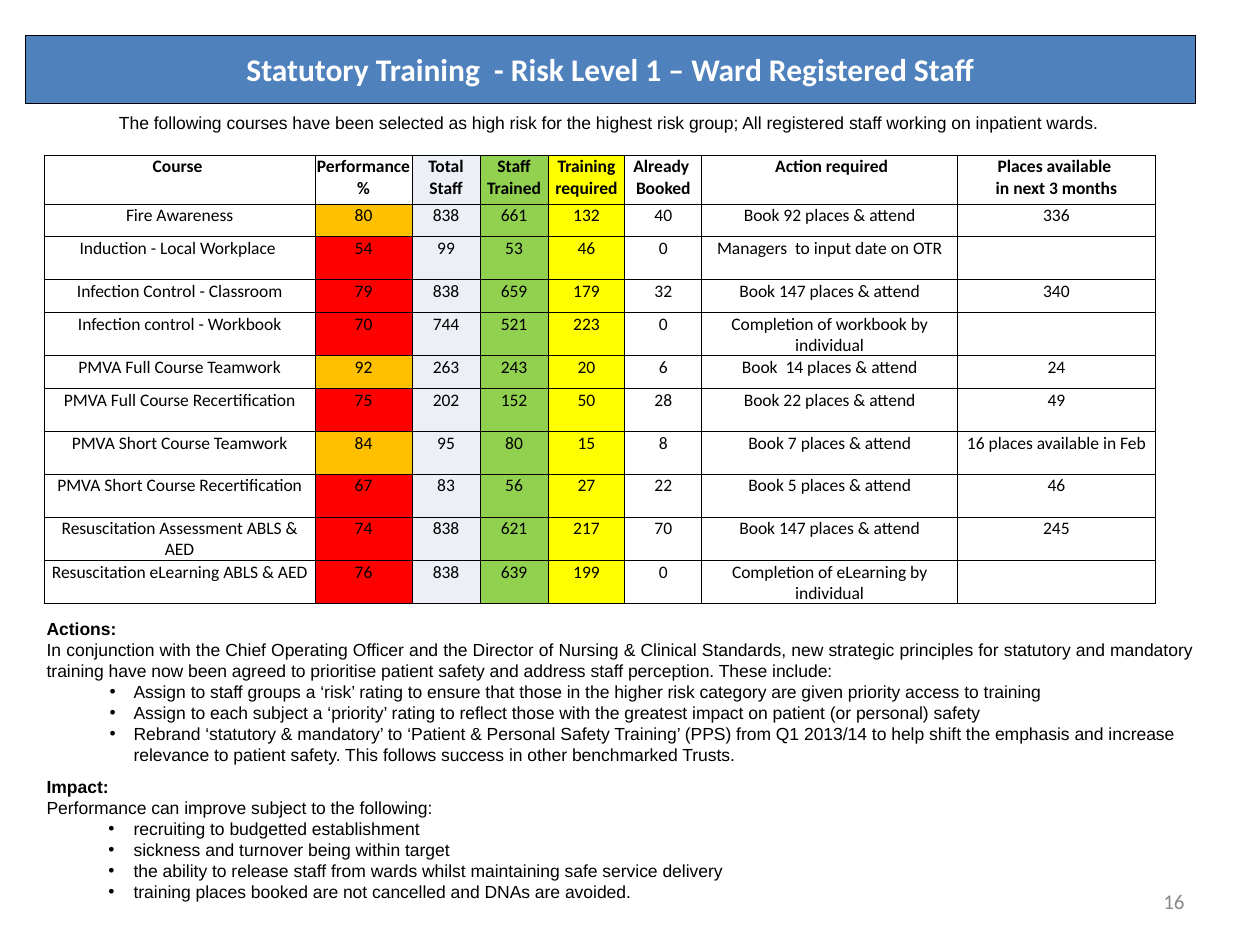
"""Build the statutory training slide for ward registered staff."""
from dataclasses import dataclass

from lxml.etree import SubElement
from pptx import Presentation
from pptx.dml.color import RGBColor
from pptx.enum.text import MSO_ANCHOR, MSO_AUTO_SIZE, PP_ALIGN
from pptx.oxml import parse_xml
from pptx.oxml.ns import nsdecls, qn
from pptx.util import Inches, Pt

BLACK = RGBColor(0x00, 0x00, 0x00)
WHITE = RGBColor(0xFF, 0xFF, 0xFF)
BLUE = RGBColor(0x4F, 0x81, 0xBD)
GREY = RGBColor(0x89, 0x89, 0x89)
PALE = RGBColor(0xEC, 0xEF, 0xF6)
GREEN = RGBColor(0x92, 0xD0, 0x50)
YELLOW = RGBColor(0xFF, 0xFF, 0x00)
AMBER = RGBColor(0xFF, 0xC0, 0x00)
RED = RGBColor(0xFF, 0x00, 0x00)
AMBER_FROM = 80


@dataclass(frozen=True)
class Column:
    heading: str
    width: float
    fill: RGBColor | None = None


@dataclass(frozen=True)
class Course:
    name: str
    performance: int
    staff: int
    trained: int
    required: int
    booked: int
    action: str
    places: str = ""
    height: float = 0.34

    def values(self) -> list[str]:
        return [self.name, str(self.performance), str(self.staff), str(self.trained),
                str(self.required), str(self.booked), self.action, self.places]


@dataclass(frozen=True)
class Line:
    text: str
    heading: bool = False
    align: PP_ALIGN = PP_ALIGN.LEFT
    level: int = 0
    hanging: float = 0


COLUMNS = [
    Column("Course ", 2.15),
    Column("Performance\n%", 0.77),
    Column("Total Staff", 0.54, PALE),
    Column("Staff Trained", 0.54, GREEN),
    Column("Training required", 0.61, YELLOW),
    Column("Already \nBooked", 0.61),
    Column(" Action required", 2.03),
    Column("Places available \nin next 3 months", 1.57),
]
COURSES = [
    Course("Fire Awareness", 80, 838, 661, 132, 40, "Book 92 places & attend", "336", 0.26),
    Course("Induction - Local Workplace ", 54, 99, 53, 46, 0, "Managers  to input date on OTR"),
    Course("Infection Control - Classroom", 79, 838, 659, 179, 32,
           "Book 147 places & attend", "340", 0.26),
    Course("Infection control - Workbook", 70, 744, 521, 223, 0,
           "Completion of workbook by individual"),
    Course("PMVA Full Course Teamwork", 92, 263, 243, 20, 6,
           "Book  14 places & attend", "24", 0.26),
    Course("PMVA Full Course Recertification", 75, 202, 152, 50, 28,
           "Book 22 places & attend", "49"),
    Course("PMVA Short Course Teamwork", 84, 95, 80, 15, 8,
           "Book 7 places & attend", "16 places available in Feb"),
    Course("PMVA Short Course Recertification", 67, 83, 56, 27, 22,
           "Book 5 places & attend", "46"),
    Course("Resuscitation Assessment ABLS & AED", 74, 838, 621, 217, 70,
           "Book 147 places & attend", "245"),
    Course("Resuscitation eLearning ABLS & AED", 76, 838, 639, 199, 0,
           "Completion of eLearning by individual"),
]
LINES = [
    Line("Actions:", heading=True),
    Line("In conjunction with the Chief Operating Officer and the Director of Nursing & Clinical "
         "Standards, new strategic principles for statutory and mandatory training have now been "
         "agreed to prioritise patient safety and address staff perception. These include:",
         align=PP_ALIGN.JUSTIFY),
    Line("Assign to staff groups a ‘risk’ rating to ensure that those in the higher risk category "
         "are given priority access to training", level=1, hanging=0.19),
    Line("Assign to each subject a ‘priority’ rating to reflect those with the greatest impact on "
         "patient (or personal) safety", level=1, hanging=0.19),
    Line("Rebrand ‘statutory & mandatory’ to ‘Patient & Personal Safety Training’ (PPS) from Q1 "
         "2013/14 to help shift the emphasis and increase relevance to patient safety. This "
         "follows success in other benchmarked Trusts.", level=1, hanging=0.19),
    Line("Impact:", heading=True),
    Line("Performance can improve subject to the following:"),
    Line("recruiting to budgetted establishment", hanging=0.2),
    Line("sickness and turnover being within target", hanging=0.2),
    Line("the ability to release staff from wards whilst maintaining safe service delivery",
         hanging=0.2),
    Line("training places booked are not cancelled and DNAs are avoided.", hanging=0.2),
]


def place(sp, left: float, top: float, width: float, height: float) -> None:
    sp.left, sp.top, sp.width, sp.height = map(Inches, (left, top, width, height))


def style(p, size: float, name: str = "Calibri", color: RGBColor = BLACK,
          bold: bool = False, align: PP_ALIGN = PP_ALIGN.CENTER) -> None:
    p.alignment = align
    p.font.size, p.font.name, p.font.bold = Pt(size), name, bold
    p.font.color.rgb = color


def add_text(s, text: str, box: tuple[float, float, float, float], anchor: MSO_ANCHOR, **font):
    tf = s.shapes.add_textbox(*map(Inches, box)).text_frame
    tf.word_wrap, tf.vertical_anchor = True, anchor
    tf.text = text
    style(tf.paragraphs[0], **font)


def add_borders(cell) -> None:
    tc_pr = cell._tc.get_or_add_tcPr()
    for i, side in enumerate(("lnL", "lnR", "lnT", "lnB")):
        tc_pr.insert(i, parse_xml(
            f'<a:{side} {nsdecls("a")} w="{Pt(0.5)}"><a:solidFill>'
            f'<a:srgbClr val="{BLACK}"/></a:solidFill></a:{side}>'))


def fill_cell(cell, text: str, color: RGBColor | None, bold: bool) -> None:
    cell.margin_left = cell.margin_right = cell.margin_top = Inches(0.01)
    cell.margin_bottom = 0
    cell.text = text
    for p in cell.text_frame.paragraphs:
        style(p, 10, bold=bold)
    if color is None:
        cell.fill.background()
    else:
        cell.fill.solid()
        cell.fill.fore_color.rgb = color
    add_borders(cell)


def add_course_table(s) -> None:
    heights = [0.39] + [c.height for c in COURSES]
    table = s.shapes.add_table(len(heights), len(COLUMNS), Inches(0.35), Inches(1.23),
                               Inches(8.82), Inches(sum(heights))).table
    table.first_row = table.horz_banding = False
    for row, height in zip(table.rows, heights):
        row.height = Inches(height)
    for j, column in enumerate(COLUMNS):
        table.columns[j].width = Inches(column.width)
        fill_cell(table.cell(0, j), column.heading, column.fill, True)
        for i, course in enumerate(COURSES, 1):
            color = column.fill
            if j == 1:
                color = AMBER if course.performance >= AMBER_FROM else RED
            fill_cell(table.cell(i, j), course.values()[j], color, False)


def add_line(p, line: Line) -> None:
    p.text, p.level = line.text, line.level
    p.space_before = Pt(0)
    p.line_spacing = 1.5 if line.heading else 1.0
    p_pr = p._p.get_or_add_pPr()
    p_pr.set("marL", str(Inches(0.69 if line.hanging else 0)))
    p_pr.set("indent", str(-Inches(line.hanging)))
    if line.hanging:
        SubElement(p_pr, qn("a:buFont"), typeface="Arial")
        SubElement(p_pr, qn("a:buChar"), char="•")
    else:
        SubElement(p_pr, qn("a:buNone"))
    style(p, 10, "Arial", bold=line.heading, align=line.align)


def main() -> None:
    prs = Presentation()
    prs.slide_width, prs.slide_height = Inches(10), Inches(7.5)
    s = prs.slides.add_slide(prs.slide_layouts[1])

    title, body = s.shapes.title, s.placeholders[1]
    place(title, 0.2, 0.28, 9.29, 0.54)
    title.fill.solid()
    title.fill.fore_color.rgb = BLUE
    title.line.color.rgb, title.line.width = BLACK, Pt(0.75)
    tf = title.text_frame
    tf.text = "Statutory Training  - Risk Level 1 – Ward Registered Staff"
    tf.auto_size, tf.vertical_anchor = MSO_AUTO_SIZE.NONE, MSO_ANCHOR.MIDDLE
    style(tf.paragraphs[0], 18, color=WHITE, bold=True)

    add_text(s, "The following courses have been selected as high risk for the highest risk group; "
             "All registered staff working on inpatient wards. ",
             (0.12, 0.84, 9.45, 0.54), MSO_ANCHOR.TOP, size=10, name="Arial")
    add_course_table(s)

    place(body, 0.27, 4.77, 9.29, 2.46)
    tf = body.text_frame
    tf.auto_size, tf.vertical_anchor = MSO_AUTO_SIZE.NONE, MSO_ANCHOR.TOP
    for i, line in enumerate(LINES):
        add_line(tf.add_paragraph() if i else tf.paragraphs[0], line)

    add_text(s, "16", (7.17, 6.95, 2.33, 0.4), MSO_ANCHOR.MIDDLE,
             size=12, color=GREY, align=PP_ALIGN.RIGHT)
    prs.save("out.pptx")


if __name__ == "__main__":
    main()
